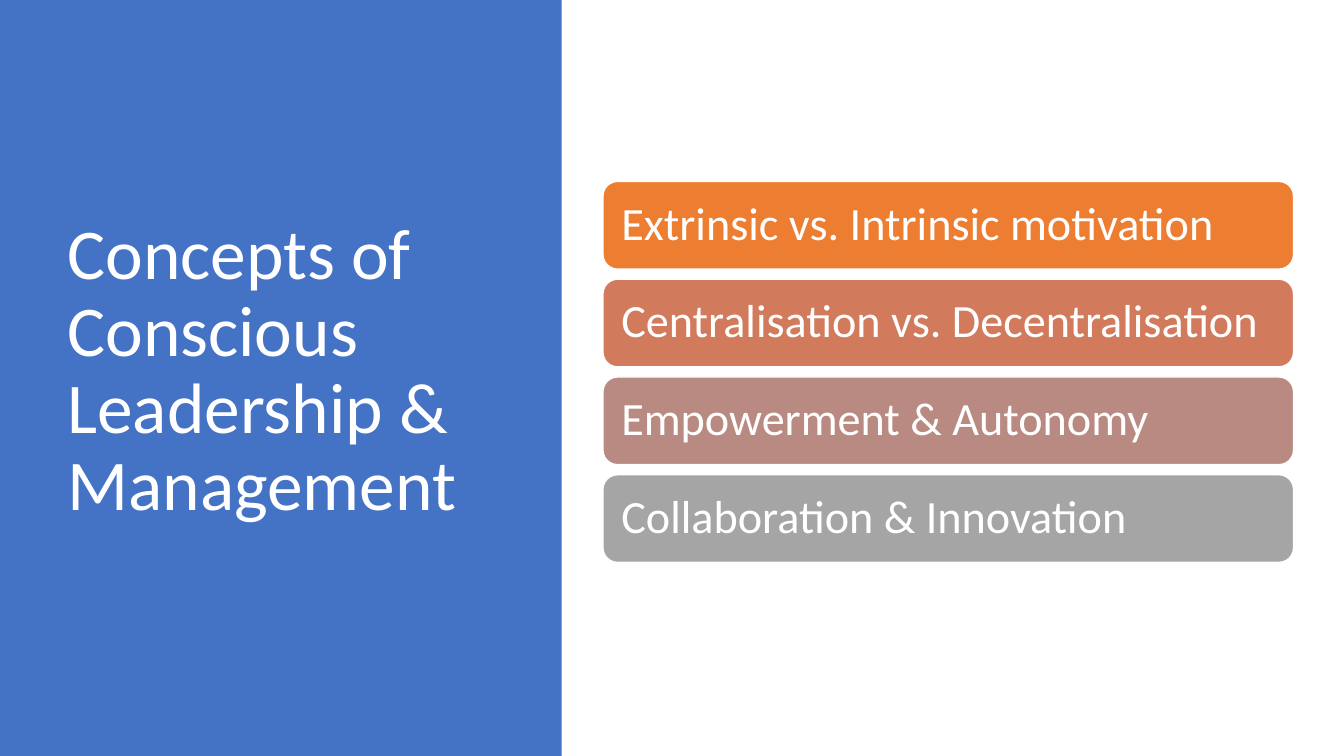
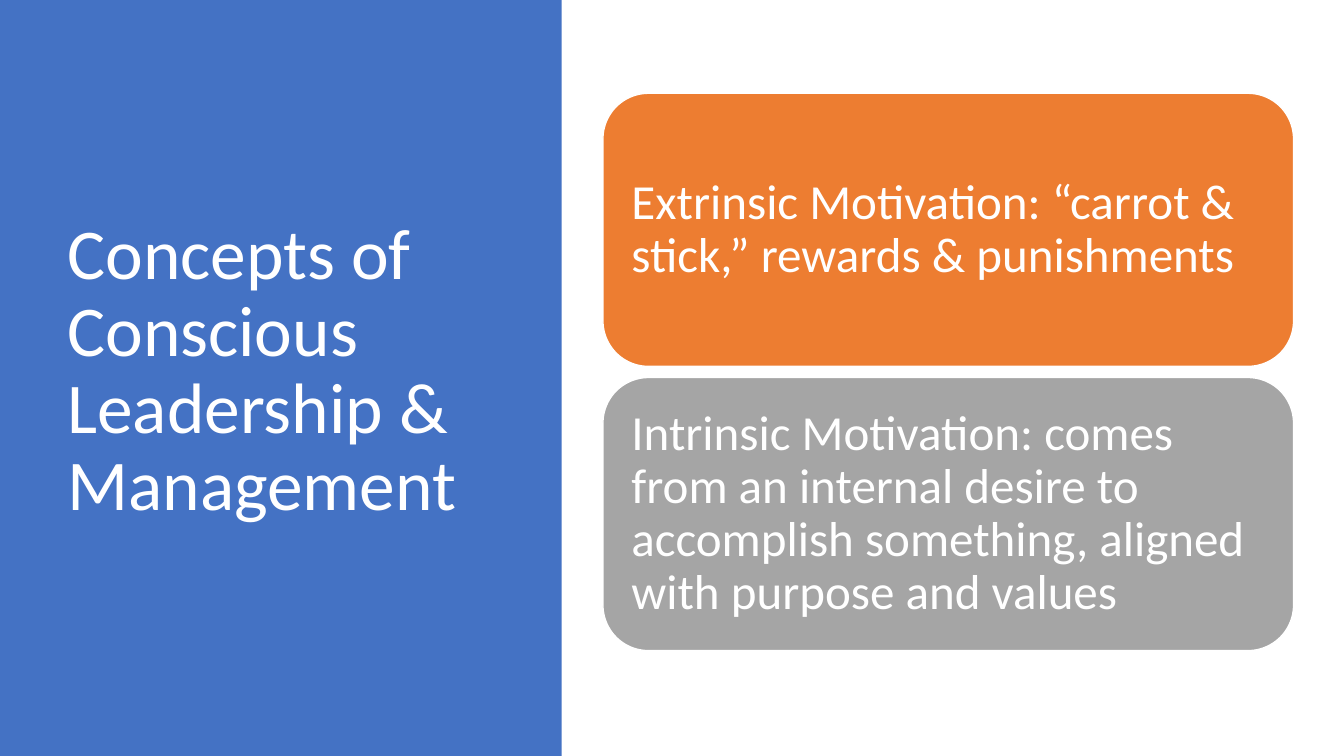
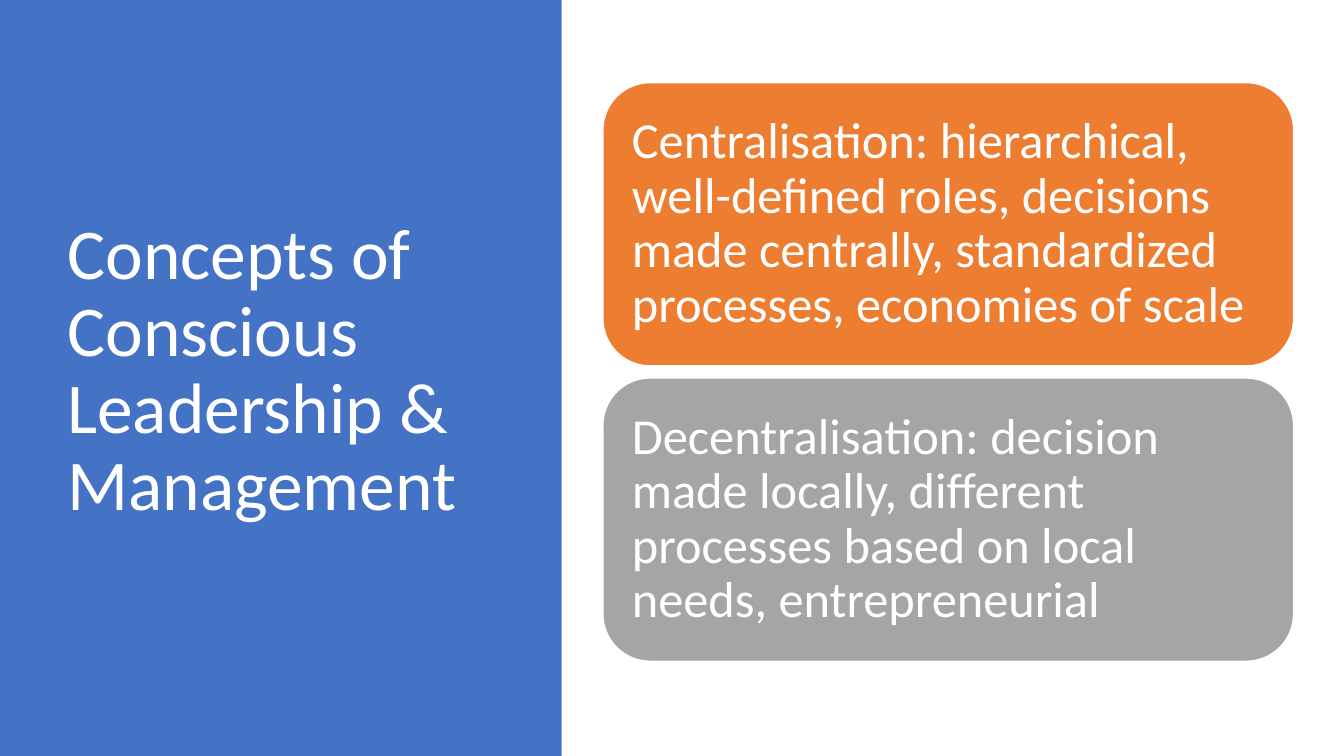
from dataclasses import dataclass

import pptx
import pptx.dml.color
import pptx.enum.shapes
import pptx.enum.text
import pptx.presentation
import pptx.shapes.autoshape
import pptx.slide
import pptx.text.text
import pptx.util

Inches = pptx.util.Inches
RGBColor = pptx.dml.color.RGBColor
Shape = pptx.enum.shapes.MSO_SHAPE

WHITE = RGBColor(0xFF, 0xFF, 0xFF)
BLUE = RGBColor(0x44, 0x72, 0xC4)
ORANGE = RGBColor(0xED, 0x7D, 0x31)
TERRACOTTA = RGBColor(0xD1, 0x7B, 0x5C)
DUSTY_ROSE = RGBColor(0xB9, 0x8A, 0x82)
GREY = RGBColor(0xA5, 0xA5, 0xA5)

FONT = "Calibri"
TITLE_LINES = ("Concepts of Conscious Leadership &", "Management")
TITLE_SIZE = 51
SLIDE_WIDTH = 13.33
SLIDE_HEIGHT = 7.5
PANEL_WIDTH = 5.57
CARD_LEFT = 5.98
CARD_WIDTH = 6.85
STACK_MIDDLE = 3.69


@dataclass(frozen=True)
class Card:
    text: str
    color: RGBColor


@dataclass(frozen=True)
class CardStack:
    """Equal cards, centred on STACK_MIDDLE; lengths in inches, text size in points."""
    cards: tuple[Card, ...]
    height: float
    gap: float
    text_size: int
    inset: float


STACKS = (
    CardStack((
        Card("Extrinsic vs. Intrinsic motivation", ORANGE),
        Card("Centralisation vs. Decentralisation", TERRACOTTA),
        Card("Empowerment & Autonomy", DUSTY_ROSE),
        Card("Collaboration & Innovation", GREY),
    ), height=0.87, gap=0.1, text_size=33, inset=0.14),
    CardStack((
        Card("Extrinsic Motivation: “carrot & stick,” rewards & punishments", ORANGE),
        Card("Intrinsic Motivation: comes from an internal desire to accomplish "
             "something, aligned with purpose and values", GREY),
    ), height=2.71, gap=0.11, text_size=35, inset=0.15),
    CardStack((
        Card("Centralisation: hierarchical, well-defined roles, decisions made "
             "centrally, standardized processes, economies of scale", ORANGE),
        Card("Decentralisation: decision made locally, different processes based "
             "on local needs, entrepreneurial", GREY),
    ), height=2.81, gap=0.12, text_size=36, inset=0.15),
)


def write_text(frame: pptx.text.text.TextFrame, lines: tuple[str, ...], size: int) -> None:
    """Write one white, left-aligned, vertically centred paragraph."""
    frame.word_wrap = True
    frame.vertical_anchor = pptx.enum.text.MSO_ANCHOR.MIDDLE
    paragraph = frame.paragraphs[0]
    paragraph.alignment = pptx.enum.text.PP_ALIGN.LEFT
    paragraph.line_spacing = 0.9
    for index, line in enumerate(lines):
        if index:
            paragraph.add_line_break()
        paragraph.add_run().text = line
    paragraph.font.name = FONT
    paragraph.font.size = pptx.util.Pt(size)
    paragraph.font.color.rgb = WHITE


def add_filled_shape(slide: pptx.slide.Slide, kind: Shape, left: float, top: float,
                     width: float, height: float,
                     color: RGBColor) -> pptx.shapes.autoshape.Shape:
    shape = slide.shapes.add_shape(kind, Inches(left), Inches(top),
                                   Inches(width), Inches(height))
    shape.shadow.inherit = False
    shape.fill.solid()
    shape.fill.fore_color.rgb = color
    return shape


def add_title_panel(slide: pptx.slide.Slide) -> None:
    panel = add_filled_shape(slide, Shape.RECTANGLE, 0, 0, PANEL_WIDTH, SLIDE_HEIGHT, BLUE)
    panel.line.fill.background()
    title = slide.shapes.add_textbox(Inches(0.57), Inches(0.68), Inches(4.16), Inches(6.02))
    write_text(title.text_frame, TITLE_LINES, TITLE_SIZE)


def add_card_stack(slide: pptx.slide.Slide, stack: CardStack) -> None:
    pitch = stack.height + stack.gap
    first_top = STACK_MIDDLE - (len(stack.cards) * pitch - stack.gap) / 2
    for index, card in enumerate(stack.cards):
        box = add_filled_shape(slide, Shape.ROUNDED_RECTANGLE, CARD_LEFT,
                               first_top + index * pitch, CARD_WIDTH, stack.height, card.color)
        box.line.color.rgb = WHITE
        box.line.width = pptx.util.Pt(1)
        frame = box.text_frame
        frame.margin_left = frame.margin_right = Inches(stack.inset)
        frame.margin_top = frame.margin_bottom = Inches(stack.inset)
        write_text(frame, (card.text,), stack.text_size)


def main() -> None:
    deck = pptx.Presentation()
    deck.slide_width = Inches(SLIDE_WIDTH)
    deck.slide_height = Inches(SLIDE_HEIGHT)
    blank_layout = deck.slide_layouts[6]
    for stack in STACKS:
        slide = deck.slides.add_slide(blank_layout)
        add_title_panel(slide)
        add_card_stack(slide, stack)
    deck.save("out.pptx")


if __name__ == "__main__":
    main()
